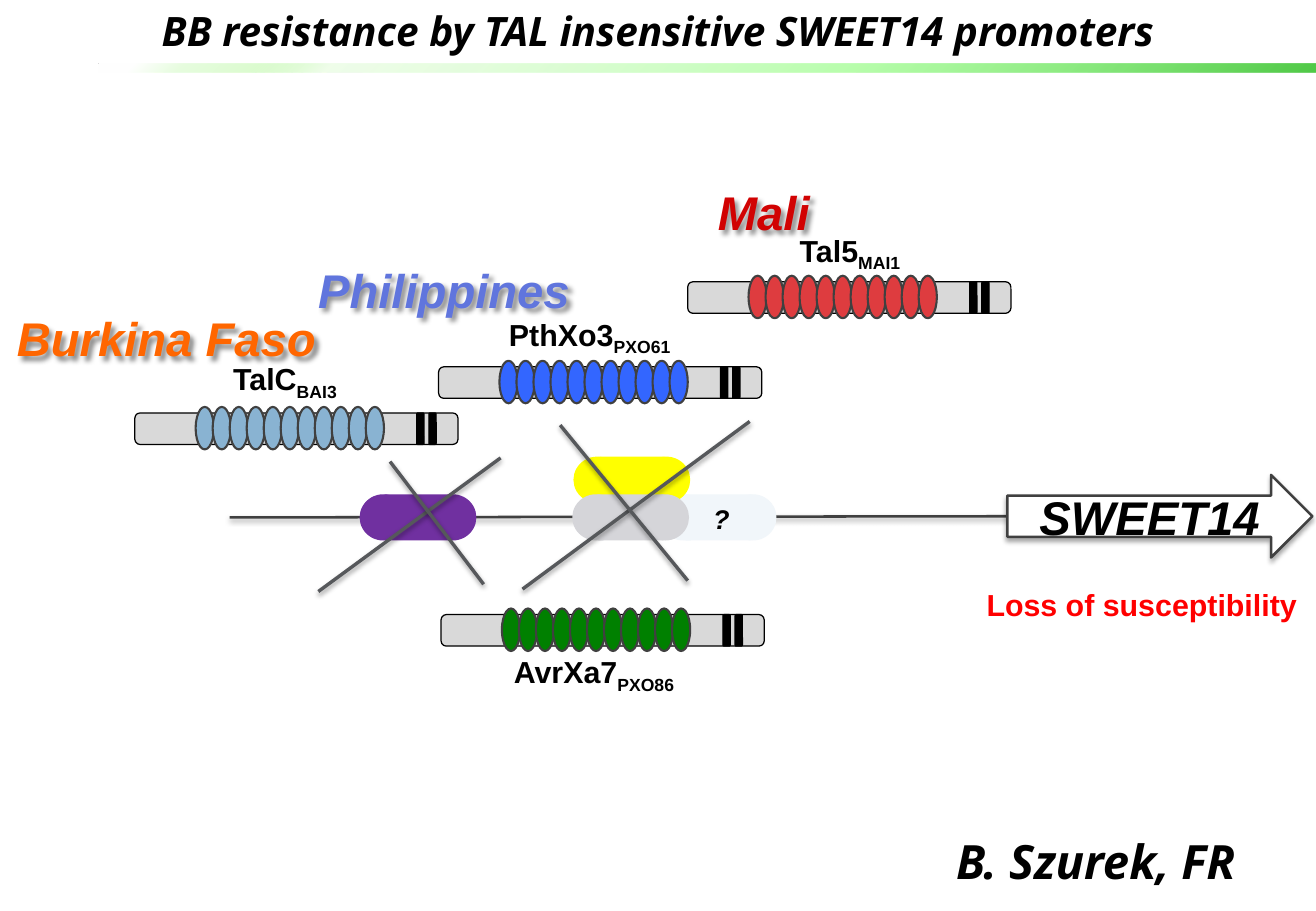
from dataclasses import dataclass
from typing import Optional

from lxml import etree
from pptx import Presentation
from pptx.dml.color import RGBColor
from pptx.enum.shapes import MSO_CONNECTOR, MSO_SHAPE
from pptx.enum.text import MSO_ANCHOR, MSO_AUTO_SIZE, PP_ALIGN
from pptx.oxml import parse_xml
from pptx.oxml.ns import qn
from pptx.util import Inches, Pt

OVAL, ROUNDED = MSO_SHAPE.OVAL, MSO_SHAPE.ROUNDED_RECTANGLE
ARROW, BAND = MSO_SHAPE.RIGHT_ARROW, MSO_SHAPE.ROUND_2_DIAG_RECTANGLE
STRAIGHT = MSO_CONNECTOR.STRAIGHT
CENTER, LEFT = PP_ALIGN.CENTER, PP_ALIGN.LEFT
MIDDLE, FIT, NO_FIT = MSO_ANCHOR.MIDDLE, MSO_AUTO_SIZE.SHAPE_TO_FIT_TEXT, MSO_AUTO_SIZE.NONE
DRAWING_NS = "http://schemas.openxmlformats.org/drawingml/2006/main"


@dataclass(frozen=True)
class Theme:
    body_font: str = "Arial"
    title_font: str = "Open Sans"
    large: int = 28
    title: int = 24
    label: int = 18
    small: int = 16
    black: str = "000000"
    white: str = "FFFFFF"
    outline: str = "404040"
    cross: str = "56585B"
    protein: str = "D9D9D9"
    alert: str = "FF0000"
    light_site: str = "F1F6FA"
    yellow_site: str = "FFFF00"
    purple_site: str = "7030A0"
    gray_site: str = "D5D5D9"
    pale_blue: str = "89B3D2"
    green: str = "008000"
    blue: str = "3366FF"
    red: str = "DE3C3F"
    philippines: str = "6075DD"
    burkina: str = "FF6600"
    mali: str = "D10202"
    # position, colour, opacity, all in percent where numeric
    band: tuple = ((0, "50C947", 100), (39, "86FE72", 57), (81, "BBF9A5", 23),
                   (87, "DCFCD0", 100), (93, "E7FDDF", 100), (97, "FFFFFF", 100))


THEME = Theme()


@dataclass(frozen=True)
class Shadow:
    opacity: int
    blur: float
    distance: float
    angle: int


@dataclass(frozen=True)
class Label:
    text: str
    left: float
    top: float
    width: float
    height: float
    size: int
    color: str = THEME.black
    subscript: str = ""
    italic: bool = False
    font: str = THEME.body_font
    align: PP_ALIGN = LEFT
    wrap: bool = False
    shadow: Optional[Shadow] = None


@dataclass(frozen=True)
class Part:
    left: float
    top: float
    color: str


@dataclass(frozen=True)
class Stroke:
    x1: float
    y1: float
    x2: float
    y2: float
    color: str
    width: float


LINE_SHADOW = Shadow(38, 3.1, 1.6, 90)
ARROW_SHADOW = Shadow(35, 3.1, 1.8, 90)
TEXT_SHADOW = Shadow(43, 3, 3, 45)

PROMOTER = Stroke(1.89, 4.26, 8.3, 4.25, THEME.outline, 1.5)
CROSSES = (
    Stroke(4.3, 4.85, 6.17, 3.47, THEME.cross, 2),
    Stroke(5.66, 4.78, 4.61, 3.5, THEME.cross, 2),
    Stroke(2.62, 4.87, 4.12, 3.77, THEME.cross, 2),
    Stroke(3.98, 4.81, 3.21, 3.8, THEME.cross, 2),
)
BINDING_SITES = (
    Part(5.44, 4.08, THEME.light_site),
    Part(4.73, 3.77, THEME.yellow_site),
    Part(2.97, 4.08, THEME.purple_site),
    Part(4.72, 4.08, THEME.gray_site),
)
PROTEINS = (
    Part(1.11, 3.4, THEME.pale_blue),
    Part(3.63, 5.06, THEME.green),
    Part(3.61, 3.02, THEME.blue),
    Part(5.66, 2.32, THEME.red),
)
LABELS = (
    Label("TalC", 1.82, 2.92, 1.11, 0.4, THEME.label, subscript="BAI3"),
    Label("PthXo3", 4.09, 2.55, 1.61, 0.4, THEME.label, subscript="PXO61"),
    Label("Tal5", 6.45, 1.86, 1.09, 0.4, THEME.label, subscript="MAI1", align=CENTER),
    Label("AvrXa7", 4.13, 5.33, 1.6, 0.4, THEME.label, subscript="PXO86"),
    Label("Philippines", 2.52, 2.1, 2.3, 0.57, THEME.large, THEME.philippines, italic=True, shadow=TEXT_SHADOW),
    Label("Burkina Faso", 0.04, 2.5, 2.69, 0.57, THEME.large, THEME.burkina, italic=True, shadow=TEXT_SHADOW),
    Label("Mali", 5.81, 1.46, 0.97, 0.57, THEME.large, THEME.mali, italic=True, shadow=TEXT_SHADOW),
    Label("?", 5.77, 4.09, 0.34, 0.37, THEME.small, italic=True),
    Label("BB resistance by TAL insensitive SWEET14 promoters", 0, 0, 10.83, 0.51, THEME.title,
          italic=True, font=THEME.title_font, align=CENTER, wrap=True),
    Label("Loss of susceptibility", 8.02, 4.78, 2.78, 0.4, THEME.label, THEME.alert),
    Label("B. Szurek, FR", 7.77, 6.8, 2.84, 0.57, THEME.large, italic=True, font=THEME.title_font),
)


def set_shadow(item, shadow: Shadow) -> None:
    properties = item._element.spPr
    effects = properties.find(qn("a:effectLst"))
    if effects is None:
        effects = etree.SubElement(properties, qn("a:effectLst"))
    outer = etree.SubElement(effects, qn("a:outerShdw"), blurRad=str(Pt(shadow.blur)),
                             dist=str(Pt(shadow.distance)), dir=str(shadow.angle * 60000),
                             algn="ctr", rotWithShape="0")
    color = etree.SubElement(outer, qn("a:srgbClr"), val=THEME.black)
    etree.SubElement(color, qn("a:alpha"), val=str(shadow.opacity * 1000))


def add_preset(shapes, preset, left: float, top: float, width: float, height: float,
               fill: str, line: str, weight: float):
    shape = shapes.add_shape(preset, Inches(left), Inches(top), Inches(width), Inches(height))
    shape.fill.solid()
    shape.fill.fore_color.rgb = RGBColor.from_string(fill)
    shape.line.color.rgb = RGBColor.from_string(line)
    shape.line.width = Pt(weight)
    shape.shadow.inherit = False
    return shape


def add_stroke(page, stroke: Stroke) -> None:
    line = page.shapes.add_connector(STRAIGHT, Inches(stroke.x1), Inches(stroke.y1),
                                     Inches(stroke.x2), Inches(stroke.y2))
    line.line.color.rgb = RGBColor.from_string(stroke.color)
    line.line.width = Pt(stroke.width)
    set_shadow(line, LINE_SHADOW)


def add_capsule(page, site: Part) -> None:
    parts = page.shapes.add_group_shape().shapes
    for preset, offset, width in ((OVAL, 0.57, 0.37), (OVAL, 0, 0.37), (ROUNDED, 0.15, 0.64)):
        add_preset(parts, preset, site.left + offset, site.top, width, 0.36, site.color, site.color, 1.5)


def add_protein(page, protein: Part) -> None:
    parts = page.shapes.add_group_shape().shapes
    left, top = protein.left, protein.top
    add_preset(parts, ROUNDED, left, top, 2.66, 0.26, THEME.protein, THEME.black, 0.75)
    for index in range(11):
        add_preset(parts, OVAL, left + 0.5 + 0.14 * index, top - 0.05, 0.15, 0.35,
                   protein.color, THEME.outline, 1.25)
    for offset in (2.42, 2.32):
        add_preset(parts, ROUNDED, left + offset, top, 0.06, 0.26, THEME.black, THEME.black, 0.75)


def add_span(para, text: str, label: Label):
    span = para.add_run()
    span.text = text
    font = span.font
    font.name, font.size, font.bold, font.italic = label.font, Pt(label.size), True, label.italic
    font.color.rgb = RGBColor.from_string(label.color)
    return span


def add_label(page, label: Label) -> None:
    box = page.shapes.add_textbox(Inches(label.left), Inches(label.top),
                                  Inches(label.width), Inches(label.height))
    box.text_frame.word_wrap = label.wrap
    box.text_frame.auto_size = FIT
    para = box.text_frame.paragraphs[0]
    para.alignment = label.align
    add_span(para, label.text, label)
    if label.subscript:
        span = add_span(para, label.subscript, label)
        span._r.get_or_add_rPr().set("baseline", "-25000")
    if label.shadow:
        set_shadow(box, label.shadow)


def add_gene_arrow(page) -> None:
    gene = Label("SWEET14", 8.29, 3.91, 2.51, 0.68, THEME.large, italic=True)
    arrow = add_preset(page.shapes, ARROW, gene.left, gene.top, gene.width, gene.height,
                       THEME.white, THEME.outline, 1.5)
    set_shadow(arrow, ARROW_SHADOW)
    frame = arrow.text_frame
    frame.word_wrap, frame.auto_size, frame.vertical_anchor = True, NO_FIT, MIDDLE
    frame.paragraphs[0].alignment = CENTER
    add_span(frame.paragraphs[0], gene.text, gene)


def add_title_band(page) -> None:
    band = add_preset(page.shapes, BAND, 0.81, 0.52, 10.02, 0.08, THEME.white, THEME.white, 0.75)
    band.line.fill.background()
    stops = "".join(
        f'<a:gs pos="{place * 1000}"><a:srgbClr val="{color}"><a:alpha val="{opacity * 1000}"/>'
        f'</a:srgbClr></a:gs>' for place, color, opacity in THEME.band)
    gradient = parse_xml(
        f'<a:gradFill xmlns:a="{DRAWING_NS}" rotWithShape="1"><a:gsLst>{stops}</a:gsLst>'
        '<a:path path="circle"><a:fillToRect l="100000" t="100000"/></a:path></a:gradFill>')
    properties = band._element.spPr
    properties.replace(properties.find(qn("a:solidFill")), gradient)


def main() -> None:
    deck = Presentation()
    deck.slide_width, deck.slide_height = Inches(10.83), Inches(7.5)
    page = deck.slides.add_slide(deck.slide_layouts[6])
    # Promoter with its binding sites and gene
    add_stroke(page, PROMOTER)
    for site in BINDING_SITES:
        add_capsule(page, site)
    add_gene_arrow(page)
    # Proteins, title band and wording
    for protein in PROTEINS:
        add_protein(page, protein)
    add_title_band(page)
    for label in LABELS:
        add_label(page, label)
    # Crossed-out sites
    for stroke in CROSSES:
        add_stroke(page, stroke)
    deck.save("out.pptx")


if __name__ == "__main__":
    main()
